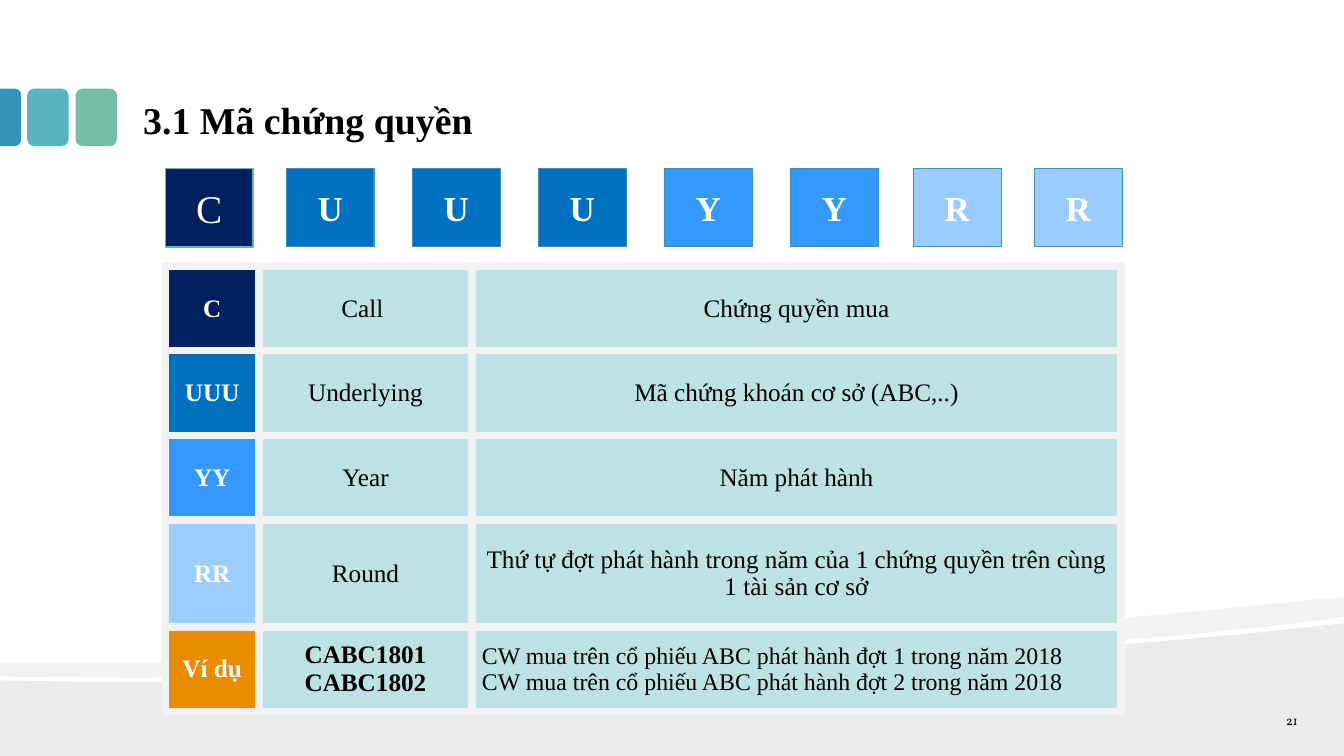
from lxml import etree
from pptx import Presentation
from pptx.dml.color import RGBColor
from pptx.enum.shapes import MSO_SHAPE
from pptx.enum.text import MSO_ANCHOR, PP_ALIGN
from pptx.oxml.ns import qn
from pptx.util import Inches, Pt

LEFT, CENTER, RIGHT = PP_ALIGN.LEFT, PP_ALIGN.CENTER, PP_ALIGN.RIGHT
MIDDLE, BOTTOM = MSO_ANCHOR.MIDDLE, MSO_ANCHOR.BOTTOM
RECT, ROUND = MSO_SHAPE.RECTANGLE, MSO_SHAPE.ROUNDED_RECTANGLE
TAB = MSO_SHAPE.ROUND_2_SAME_RECTANGLE


class Theme:
    font, page_font = "Times New Roman", "Vollkorn"
    black, white = "000000", "FFFFFF"
    navy, blue, sky, pale = "002060", "0070C0", "3399FF", "99CCFF"
    pale_cell, orange, mint = "9BCDFF", "EA8B00", "BCE2E6"
    ocean, teal, green, edge = "3494BA", "58B6C0", "75BDA7", "F2F2F2"
    hill, ridge = 8, 5  # percent of black
    title, lead, tile, cell, note, page = 27, 28, 25, 18, 17, 9


# Content
TITLE = "3.1 Mã chứng quyền"
PAGE = "21"
TILES = [  # letter, left, fill
    ("C", 1.64, Theme.navy),
    ("U", 2.84, Theme.blue),
    ("U", 4.09, Theme.blue),
    ("U", 5.34, Theme.blue),
    ("Y", 6.59, Theme.sky),
    ("Y", 7.84, Theme.sky),
    ("R", 9.06, Theme.pale),
    ("R", 10.26, Theme.pale),
]
ROWS = [  # code, fill, term lines, meaning lines
    ("C", Theme.navy, ["Call "], ["Chứng quyền mua"]),
    ("UUU", Theme.blue, ["Underlying"], ["Mã chứng khoán cơ sở (ABC,..)"]),
    ("YY", Theme.sky, ["Year"], ["Năm phát hành"]),
    ("RR", Theme.pale_cell, ["Round"],
     ["Thứ tự đợt phát hành trong năm của 1 chứng quyền trên cùng 1 tài sản cơ sở"]),
    ("Ví dụ", Theme.orange, ["CABC1801", "CABC1802"],
     ["CW mua trên cổ phiếu ABC phát hành đợt 1 trong năm 2018",
      "CW mua trên cổ phiếu ABC phát hành đợt 2 trong năm 2018"]),
]
COLS = [0.93, 2.11, 6.44]
HEIGHTS = [0.84, 0.84, 0.84, 1.06, 0.84]

# Hills: a start point, then moves of one point (line) or three (curve)
HILLS = [
    (Theme.hill, (13.33, 6.18),
     [[(13.33, 7.5)], [(0, 7.5)], [(0, 6.75)],
      [(3.52, 6.83), (10.42, 6.55), (13.33, 6.18)]]),
    (Theme.ridge, (13.33, 5.92),
     [[(13.33, 6.12)],
      [(12.56, 6.23), (11.49, 6.33), (10.29, 6.41)],
      [(6.98, 6.63), (2.58, 6.77), (0, 6.71)],
      [(0, 6.57)],
      [(6.52, 6.62), (9.71, 6.27), (13.33, 5.92)]]),
]


def rgb(code):
    return RGBColor.from_string(code)


def write(frame, lines, size, color, bold=False, align=CENTER, font=Theme.font):
    frame.word_wrap = True
    for i, line in enumerate(lines):
        par = frame.paragraphs[0] if i == 0 else frame.add_paragraph()
        par.alignment = align
        run = par.add_run()
        run.text = line
        run.font.name, run.font.size, run.font.bold = font, Pt(size), bold
        run.font.color.rgb = rgb(color)


def inset(frame, anchor):
    frame.vertical_anchor = anchor
    frame.margin_left = frame.margin_right = Inches(0.13)
    frame.margin_top = frame.margin_bottom = Inches(0.07)


def paint(shape, fill, line=None, width=0.75):
    shape.shadow.inherit = False
    shape.fill.solid()
    shape.fill.fore_color.rgb = rgb(fill)
    if line:
        shape.line.color.rgb = rgb(line)
        shape.line.width = Pt(width)
    else:
        shape.line.fill.background()


def block(shapes, kind, x, y, w, h, *style):
    shape = shapes.add_shape(kind, Inches(x), Inches(y), Inches(w), Inches(h))
    paint(shape, *style)
    return shape


def draw_hill(shapes, shade, start, moves):
    # The pen keeps whole units only, so it works in thousandths of an inch
    spots = [(x * 1000, y * 1000) for move in moves for x, y in move]
    pen = shapes.build_freeform(start[0] * 1000, start[1] * 1000, Inches(1) / 1000)
    pen.add_line_segments(spots, close=False)
    hill = pen.convert_to_shape()
    paint(hill, Theme.black)
    tint = next(hill._element.spPr.iter(qn("a:srgbClr")))
    etree.SubElement(tint, qn("a:alpha"), val=str(shade * 1000))

    # Join each group of three points into one curve
    route = next(hill._element.iter(qn("a:path")))
    legs = iter(route.findall(qn("a:lnTo")))
    for move in moves:
        group = [next(legs) for _ in move]
        if len(group) == 3:
            curve = etree.Element(qn("a:cubicBezTo"))
            group[0].addprevious(curve)
            for leg in group:
                curve.append(leg[0])
                route.remove(leg)
    etree.SubElement(route, qn("a:close"))


def fill_cell(cell, fill, lines, *style):
    props = cell._tc.get_or_add_tcPr()
    for side in ("a:lnL", "a:lnR", "a:lnT", "a:lnB"):
        line = etree.SubElement(props, qn(side), w=str(Pt(6)))
        solid = etree.SubElement(line, qn("a:solidFill"))
        etree.SubElement(solid, qn("a:srgbClr"), val=Theme.edge)
    cell.fill.solid()
    cell.fill.fore_color.rgb = rgb(fill)
    cell.vertical_anchor = MIDDLE
    write(cell.text_frame, lines, *style)


def main():
    deck = Presentation()
    deck.slide_width, deck.slide_height = Inches(13.33), Inches(7.5)
    slide = deck.slides.add_slide(deck.slide_layouts[5])
    shapes = slide.shapes

    # Background hills
    for hill in HILLS:
        draw_hill(shapes, *hill)

    # Accent tabs beside the title
    for x, fill in ((0.75, Theme.green), (0.27, Theme.teal)):
        block(shapes, ROUND, x, 0.88, 0.41, 0.57, fill)
    tab = block(shapes, TAB, -0.18, 1.06, 0.57, 0.21, Theme.ocean)
    tab.rotation = 90
    tab.adjustments[0] = 0.29

    # Title
    title = shapes.title
    title.left, title.top = Inches(1.29), Inches(0.85)
    title.width, title.height = Inches(10.59), Inches(0.63)
    inset(title.text_frame, BOTTOM)
    write(title.text_frame, [TITLE], Theme.title, Theme.black, True, LEFT)

    # Code tiles
    for i, (mark, x, fill) in enumerate(TILES):
        lead = i == 0
        line = (Theme.teal, 0.85) if lead else (Theme.ocean, 0.75)
        tile = block(shapes, RECT, x, 1.67, 0.87, 0.78, fill, *line)
        tile.text_frame.vertical_anchor = MIDDLE
        size = Theme.lead if lead else Theme.tile
        write(tile.text_frame, [mark], size, Theme.white, not lead)

    # Table of code parts
    table = shapes.add_table(len(ROWS), len(COLS), Inches(1.64), Inches(2.64),
                             Inches(sum(COLS)), Inches(sum(HEIGHTS))).table
    table.first_row = table.horz_banding = False
    for col, width in zip(table.columns, COLS):
        col.width = Inches(width)
    for row, height, (code, fill, term, sense) in zip(table.rows, HEIGHTS, ROWS):
        row.height = Inches(height)
        sample = len(term) > 1
        head, mid, last = row.cells
        fill_cell(head, fill, [code], Theme.cell, Theme.white, True)
        fill_cell(mid, Theme.mint, term, Theme.cell, Theme.black, sample)
        fill_cell(last, Theme.mint, sense, Theme.note if sample else Theme.cell,
                  Theme.black, False, LEFT if sample else CENTER)

    # Page number
    page = shapes.add_textbox(Inches(12.11), Inches(7.05), Inches(0.89), Inches(0.2))
    inset(page.text_frame, MIDDLE)
    write(page.text_frame, [PAGE], Theme.page, Theme.black, False, RIGHT, Theme.page_font)

    deck.save("out.pptx")


if __name__ == "__main__":
    main()
